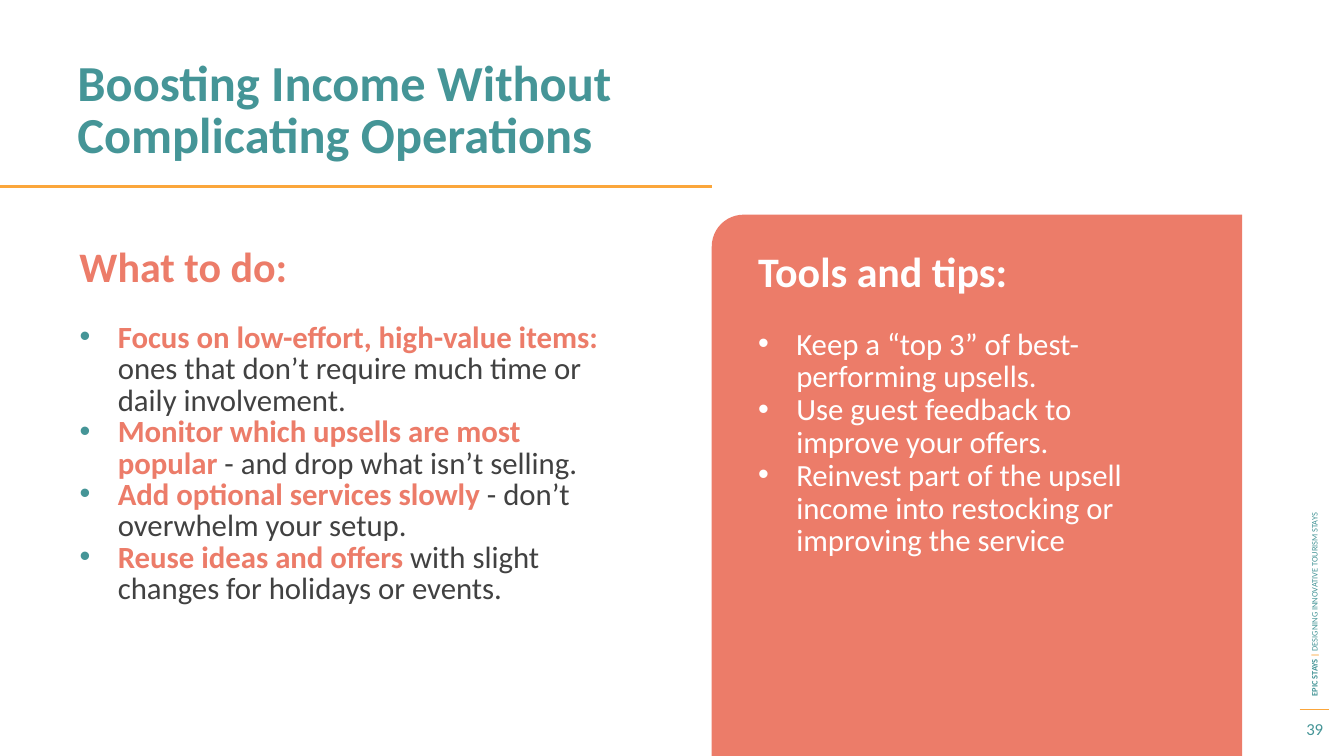
from lxml.etree import SubElement
from pptx import Presentation
from pptx.dml.color import RGBColor
from pptx.enum.shapes import MSO_CONNECTOR, MSO_SHAPE
from pptx.enum.text import MSO_ANCHOR, PP_ALIGN
from pptx.oxml.ns import qn
from pptx.util import Inches, Pt

COLORS = {
    "teal": "459597",
    "coral": "EC7C69",
    "amber": "FBA63B",
    "text": "414141",
    "white": "FFFFFF",
}
FONT = "Calibri"
PANEL_LEFT = 7.06
BULLET_INDENT = 0.38

ACTIONS = [
    ("Focus on low-effort, high-value items: ",
     "ones that don’t require much time or daily involvement."),
    ("Monitor which upsells are most popular ", "- and drop what isn’t selling."),
    ("Add optional services slowly ", "- don’t overwhelm your setup."),
    ("Reuse ideas and offers ", "with slight changes for holidays or events."),
]
TIPS = [
    "Keep a “top 3” of best-performing upsells.",
    "Use guest feedback to improve your offers.",
    "Reinvest part of the upsell income into restocking or improving the service",
]


def color(name):
    return RGBColor.from_string(COLORS[name])


def add_box(slide, left, top, width, height, anchor=MSO_ANCHOR.TOP):
    shape = slide.shapes.add_textbox(
        Inches(left), Inches(top), Inches(width), Inches(height))
    shape.text_frame.word_wrap = True
    shape.text_frame.vertical_anchor = anchor
    return shape


def write(paragraph, parts, size, line=None):
    """Fill a paragraph with (text, colour name, bold) parts."""
    if line:
        paragraph.line_spacing = Pt(line)
    for text, color_name, bold in parts:
        run = paragraph.add_run()
        run.text = text
        run.font.name = FONT
        run.font.size = Pt(size)
        run.font.bold = bold
        run.font.color.rgb = color(color_name)


def add_bullet(paragraph, color_name):
    properties = paragraph._p.get_or_add_pPr()
    properties.set("marL", str(Inches(BULLET_INDENT)))
    properties.set("indent", str(-Inches(BULLET_INDENT)))
    bullet_color = SubElement(properties, qn("a:buClr"))
    SubElement(bullet_color, qn("a:srgbClr"), val=COLORS[color_name])
    SubElement(properties, qn("a:buFont"), typeface="Arial")
    SubElement(properties, qn("a:buChar"), char="•")


def add_rule(slide, left, right, y, width):
    rule = slide.shapes.add_connector(
        MSO_CONNECTOR.STRAIGHT, Inches(left), Inches(y), Inches(right), Inches(y))
    rule.line.color.rgb = color("amber")
    rule.line.width = Pt(width)
    SubElement(rule._element.spPr, qn("a:effectLst"))


def add_panel(slide):
    """Coral panel with its top left corner rounded."""
    panel = slide.shapes.add_shape(
        MSO_SHAPE.ROUND_1_RECTANGLE,
        Inches(PANEL_LEFT), Inches(2.13), Inches(5.26), Inches(5.37))
    panel.adjustments[0] = 0.06
    panel._element.spPr.xfrm.set("flipH", "1")
    panel.shadow.inherit = False
    panel.fill.solid()
    panel.fill.fore_color.rgb = color("coral")
    panel.line.fill.background()


def add_margin(slide):
    """Rotated course name, rule and page number at the right edge."""
    add_rule(slide, 12.89, 13.18, 7.04, 0.75)
    course = add_box(slide, 10.15, 4.02, 5.77, 0.2, MSO_ANCHOR.MIDDLE)
    course.rotation = 270
    write(course.text_frame.paragraphs[0], [
        ("EPIC STAYS ", "teal", True),
        ("| ", "amber", True),
        ("DESIGNING INNOVATIVE TOURISM STAYS", "teal", False),
    ], 6)
    number = add_box(slide, 12.78, 7.06, 0.52, 0.34, MSO_ANCHOR.MIDDLE)
    paragraph = number.text_frame.paragraphs[0]
    paragraph.alignment = PP_ALIGN.CENTER
    write(paragraph, [("39", "teal", False)], 12)


def add_actions(slide):
    heading = add_box(slide, 0.69, 2.43, 6.14, 0.88)
    write(heading.text_frame.paragraphs[0],
          [("What to do:", "coral", True)], 30, 29)
    text_frame = add_box(slide, 0.69, 3.16, 5.41, 4).text_frame
    for index, (lead, detail) in enumerate(ACTIONS):
        paragraph = text_frame.add_paragraph() if index else text_frame.paragraphs[0]
        add_bullet(paragraph, "teal")
        write(paragraph, [(lead, "coral", True), (detail, "text", False)], 22, 22.4)


def add_tips(slide):
    add_panel(slide)
    text_frame = add_box(slide, 7.42, 2.56, 4.33, 3.59).text_frame
    heading = text_frame.paragraphs[0]
    write(heading, [("Tools and tips:", "white", True)], 30, 23.4)
    heading.space_after = Pt(23.4)
    for tip in TIPS:
        paragraph = text_frame.add_paragraph()
        add_bullet(paragraph, "white")
        write(paragraph, [(tip, "white", False)], 22, 23.4)


def main():
    presentation = Presentation()
    presentation.slide_width = Inches(13.33)
    presentation.slide_height = Inches(7.5)
    slide = presentation.slides.add_slide(presentation.slide_layouts[6])

    add_margin(slide)
    title = add_box(slide, 0.67, 0.54, 7.48, 0.88)
    write(title.text_frame.paragraphs[0],
          [("Boosting Income Without Complicating Operations", "teal", True)], 36, 37.2)
    add_rule(slide, 0, PANEL_LEFT, 1.85, 1.5)
    add_actions(slide)
    add_tips(slide)

    presentation.save("out.pptx")


if __name__ == "__main__":
    main()
